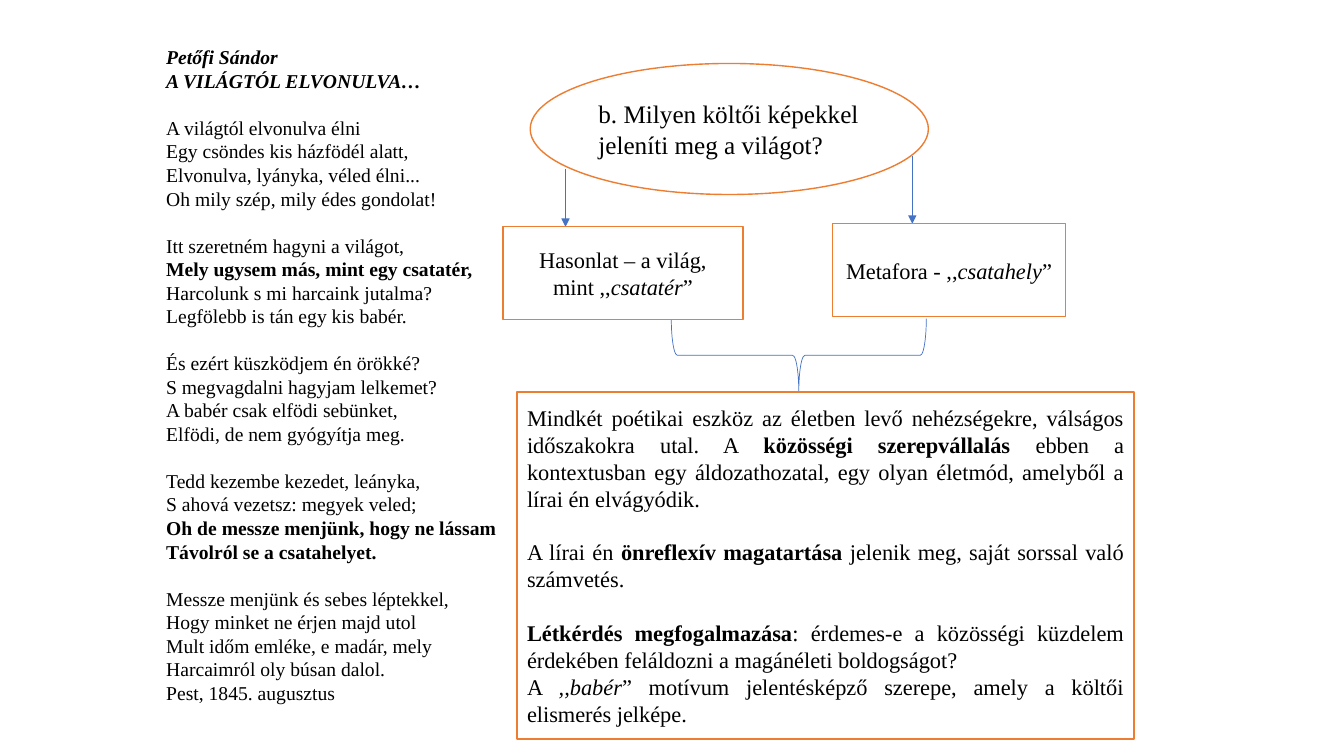
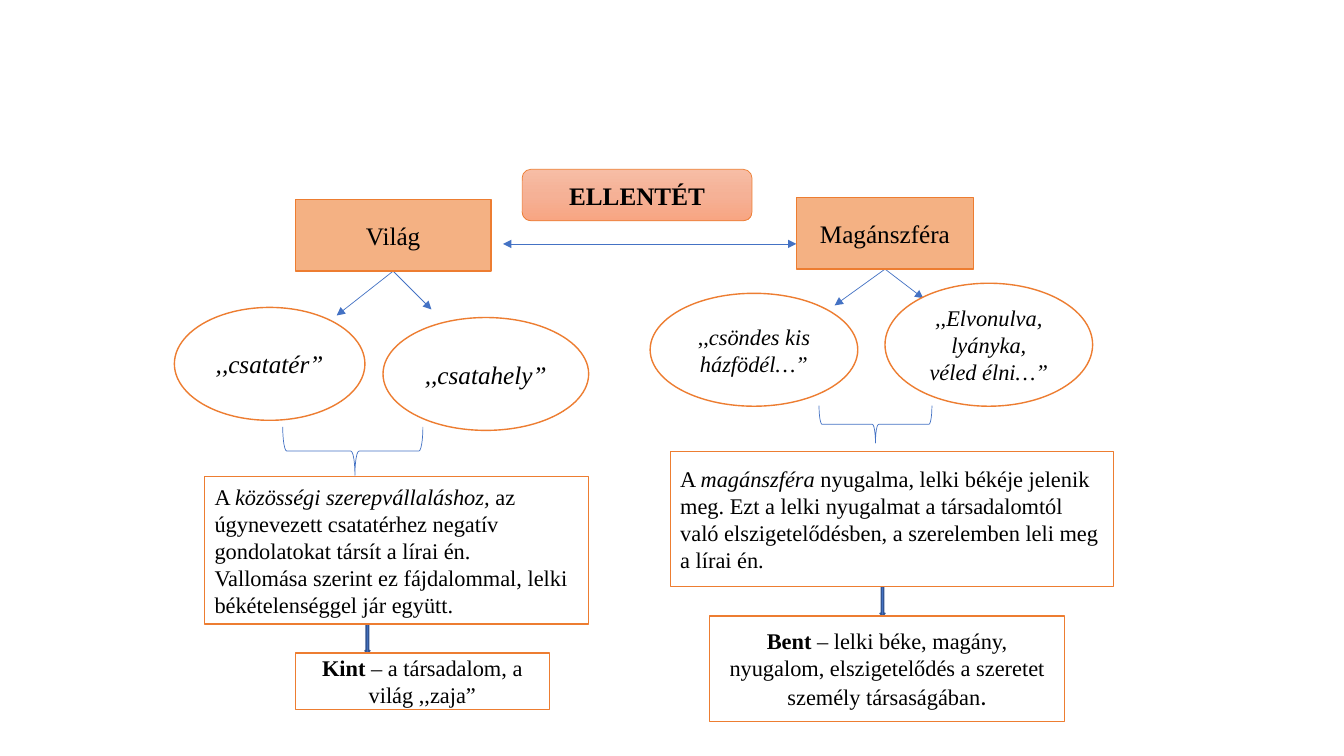
"""Builds two slides on the imagery and the contrasts of a poem."""
from copy import deepcopy
from dataclasses import dataclass

from pptx import Presentation
from pptx.dml.color import RGBColor as Rgb
from pptx.enum.shapes import MSO_CONNECTOR as Link, MSO_SHAPE as Form
from pptx.enum.text import MSO_ANCHOR as Anchor, PP_ALIGN as Align
from pptx.oxml.ns import qn
from pptx.oxml.xmlchemy import OxmlElement
from pptx.util import Inches, Pt


@dataclass(frozen=True)
class Theme:
    ink: str = "000000"
    paper: str = "FFFFFF"
    frame: str = "ED7D31"
    link: str = "4472C4"
    link_edge: str = "325491"
    topic: str = "F4B183"
    glow: tuple = ((0, "F7BDA5"), (0.5, "F5B196"), (1, "F8A582"))
    serif: str = "Times New Roman"
    sans: str = "Calibri"
    verse: int = 14
    body: int = 16
    head: int = 18
    thin: float = 0.5
    edge: float = 1
    line_height: float = 1.2


THEME = Theme()
CELL = Inches(0.1)
COLUMNS, ROWS = 133.33, 75


def write(target, text, size, align):
    """Write stanzas split by an empty line, with *bold* and _italic_ marks."""
    frame = target.text_frame
    frame.word_wrap = True
    for s, stanza in enumerate(text.split("\n\n")):
        for v, verse in enumerate(stanza.split("\n")):
            first = s == v == 0
            paragraph = frame.paragraphs[0] if first else frame.add_paragraph()
            paragraph.alignment = align
            if s and not v:
                paragraph.space_before = Pt(size * THEME.line_height)
            for b, strong in enumerate(verse.split("*")):
                for i, part in enumerate(strong.split("_")):
                    if not part:
                        continue
                    run = paragraph.add_run()
                    run.text = part
                    run.font.color.rgb = Rgb.from_string(THEME.ink)
                    looks = {"name": THEME.serif, "size": Pt(size),
                             "bold": b % 2 == 1, "italic": i % 2 == 1}
                    for name, value in looks.items():
                        setattr(run.font, name, value)


def draw(slide, form, cells, fill=THEME.paper, line=THEME.frame, width=THEME.edge):
    """Draw a preset form on the grid, without fill if none is given."""
    figure = slide.shapes.add_shape(form, *(int(cell * CELL) for cell in cells))
    figure.shadow.inherit = False
    figure.line.color.rgb = Rgb.from_string(line)
    figure.line.width = Pt(width)
    if fill:
        figure.fill.solid()
        figure.fill.fore_color.rgb = Rgb.from_string(fill)
    else:
        figure.fill.background()
    figure.text_frame.vertical_anchor = Anchor.MIDDLE
    return figure


deck = Presentation()
deck.slide_width, deck.slide_height = int(COLUMNS * CELL), int(ROWS * CELL)
imagery, contrast = (deck.slides.add_slide(deck.slide_layouts[6]) for _ in range(2))

POEM = """*_Petőfi Sándor_*
*_A VILÁGTÓL ELVONULVA…_*

A világtól elvonulva élni
Egy csöndes kis házfödél alatt,
Elvonulva, lyányka, véled élni...
Oh mily szép, mily édes gondolat!

Itt szeretném hagyni a világot,
*Mely ugysem más, mint egy csatatér,*
Harcolunk s mi harcaink jutalma?
Legfölebb is tán egy kis babér.

És ezért küszködjem én örökké?
S megvagdalni hagyjam lelkemet?
A babér csak elfödi sebünket,
Elfödi, de nem gyógyítja meg.

Tedd kezembe kezedet, leányka,
S ahová vezetsz: megyek veled;
*Oh de messze menjünk, hogy ne lássam*
*Távolról se a csatahelyet.*

Messze menjünk és sebes léptekkel,
Hogy minket ne érjen majd utol
Mult időm emléke, e madár, mely
Harcaimról oly búsan dalol.
Pest, 1845. augusztus"""

MEANING = """Mindkét poétikai eszköz az életben levő nehézségekre, válságos \
időszakokra utal. A *közösségi szerepvállalás* ebben a kontextusban egy \
áldozathozatal, egy olyan életmód, amelyből a lírai én elvágyódik.

A lírai én *önreflexív magatartása* jelenik meg, saját sorssal való számvetés.

*Létkérdés megfogalmazása*: érdemes-e a közösségi küzdelem érdekében \
feláldozni a magánéleti boldogságot?
A _,,babér_” motívum jelentésképző szerepe, amely a költői elismerés jelképe."""

WORLD = """A _közösségi szerepvállaláshoz,_ az úgynevezett csatatérhez negatív \
gondolatokat társít a lírai én.
Vallomása szerint ez fájdalommal, lelki békételenséggel jár együtt."""

PRIVACY = """A _magánszféra_ nyugalma, lelki békéje jelenik meg. Ezt a lelki \
nyugalmat a társadalomtól való elszigetelődésben, a szerelemben leli meg a lírai én."""

INSIDE = "*Bent* – lelki béke, magány, nyugalom, elszigetelődés a szeretet személy társaságában"

poem = imagery.shapes.add_textbox(*(int(cell * CELL) for cell in (15.5, 4, 84.5, 67)))
write(poem, POEM, THEME.verse, Align.LEFT)

arrows = [
    (imagery, (56.1, 16.8), (56.1, 22.5), ["tailEnd"]),
    (imagery, (90.5, 15.5), (90.5, 22.2), ["tailEnd"]),
    (contrast, (49.9, 24.2), (79, 24.2), ["headEnd", "tailEnd"]),
    (contrast, (39, 26.9), (33.4, 31.3), ["tailEnd"]),
    (contrast, (39, 26.9), (42.8, 30.7), ["tailEnd"]),
    (contrast, (87.8, 26.7), (82.8, 30.3), ["tailEnd"]),
    (contrast, (87.8, 26.7), (91.6, 29.6), ["tailEnd"]),
]
for slide, start, end, tips in arrows:
    arrow = slide.shapes.add_connector(
        Link.STRAIGHT, *(int(cell * CELL) for cell in start + end))
    arrow.line.color.rgb = Rgb.from_string(THEME.link)
    arrow.line.width = Pt(THEME.thin)
    for tip in tips:
        point = OxmlElement(f"a:{tip}")
        point.set("type", "triangle")
        arrow.line._get_or_add_ln().append(point)
    arrow._element.spPr.append(OxmlElement("a:effectLst"))

braces = [
    (imagery, (75.6, 22.6, 7.3, 25.3), 0.5),
    (contrast, (32.6, 37.8, 4.8, 13.9), 0.515),
    (contrast, (85, 36.5, 3.7, 11.2), 0.5),
]
for slide, cells, middle in braces:
    brace = draw(slide, Form.LEFT_BRACE, cells, None, THEME.link, THEME.thin)
    brace.rotation = 270
    brace.adjustments[1] = middle

for column, row in ((36.2, 61.9), (87.3, 58.2)):
    draw(contrast, Form.DOWN_ARROW, (column, row, 0.5, 2.9), THEME.link, THEME.link_edge)

bubbles = [
    (imagery, (52.6, 6.3, 39.5, 13), "b. Milyen költői képekkel jeleníti meg a világot?",
     THEME.head, Align.LEFT),
    (contrast, (17.3, 30.5, 18.9, 11.2), "_,,csatatér”_", THEME.head, Align.CENTER),
    (contrast, (38, 31.5, 20.4, 11.2), "_,,csatahely”_", THEME.head, Align.CENTER),
    (contrast, (64.5, 29.1, 20.6, 11.2), ",,_csöndes kis házfödél…”_",
     THEME.body, Align.CENTER),
    (contrast, (87.8, 28.1, 20.6, 12.2), "_,,Elvonulva, lyányka, véled élni…”_",
     THEME.body, Align.CENTER),
]
for slide, cells, text, size, align in bubbles:
    write(draw(slide, Form.OVAL, cells), text, size, align)

for cells, text in (((29.3, 19.8, 19.4, 7.1), "Világ"),
                    ((79, 19.6, 17.6, 7.1), "Magánszféra")):
    write(draw(contrast, Form.RECTANGLE, cells, THEME.topic), text, THEME.head, Align.CENTER)

notes = [
    (imagery, (49.9, 22.5, 23.8, 9.2), "Hasonlat – a világ, mint ,,_csatatér_”", Align.CENTER),
    (imagery, (82.6, 22.2, 23.1, 9.2), "Metafora - ,,_csatahely_”", Align.CENTER),
    (imagery, (51.3, 38.9, 61.2, 34.4), MEANING, Align.JUSTIFY),
    (contrast, (20.3, 47.3, 38.1, 14.6), WORLD, Align.LEFT),
    (contrast, (66.5, 44.8, 44, 13.4), PRIVACY, Align.LEFT),
    (contrast, (29.3, 64.8, 25.2, 5.6), "*Kint* – a társadalom, a világ ,,zaja”", Align.CENTER),
]
for slide, cells, text, align in notes:
    write(draw(slide, Form.RECTANGLE, cells), text, THEME.body, align)

inside = draw(contrast, Form.RECTANGLE, (70.4, 61.1, 35.2, 10.5))
write(inside, INSIDE, THEME.body, Align.CENTER)
full_stop = inside.text_frame.paragraphs[0].add_run()
full_stop.text = "."
full_stop.font.color.rgb = Rgb.from_string(THEME.ink)
for name, value in {"name": THEME.sans, "size": Pt(THEME.head)}.items():
    setattr(full_stop.font, name, value)

title = draw(contrast, Form.ROUNDED_RECTANGLE, (51.8, 16.8, 22.8, 5.1), width=THEME.thin)
title.fill.gradient()
title.fill.gradient_angle = 270
stops = title._element.spPr.find(qn("a:gradFill")).find(qn("a:gsLst"))
stops.insert(1, deepcopy(stops[0]))
for stop, (position, colour) in zip(title.fill.gradient_stops, THEME.glow):
    stop.position = position
    stop.color.rgb = Rgb.from_string(colour)
write(title, "*ELLENTÉT*", THEME.head, Align.CENTER)

deck.save("out.pptx")
